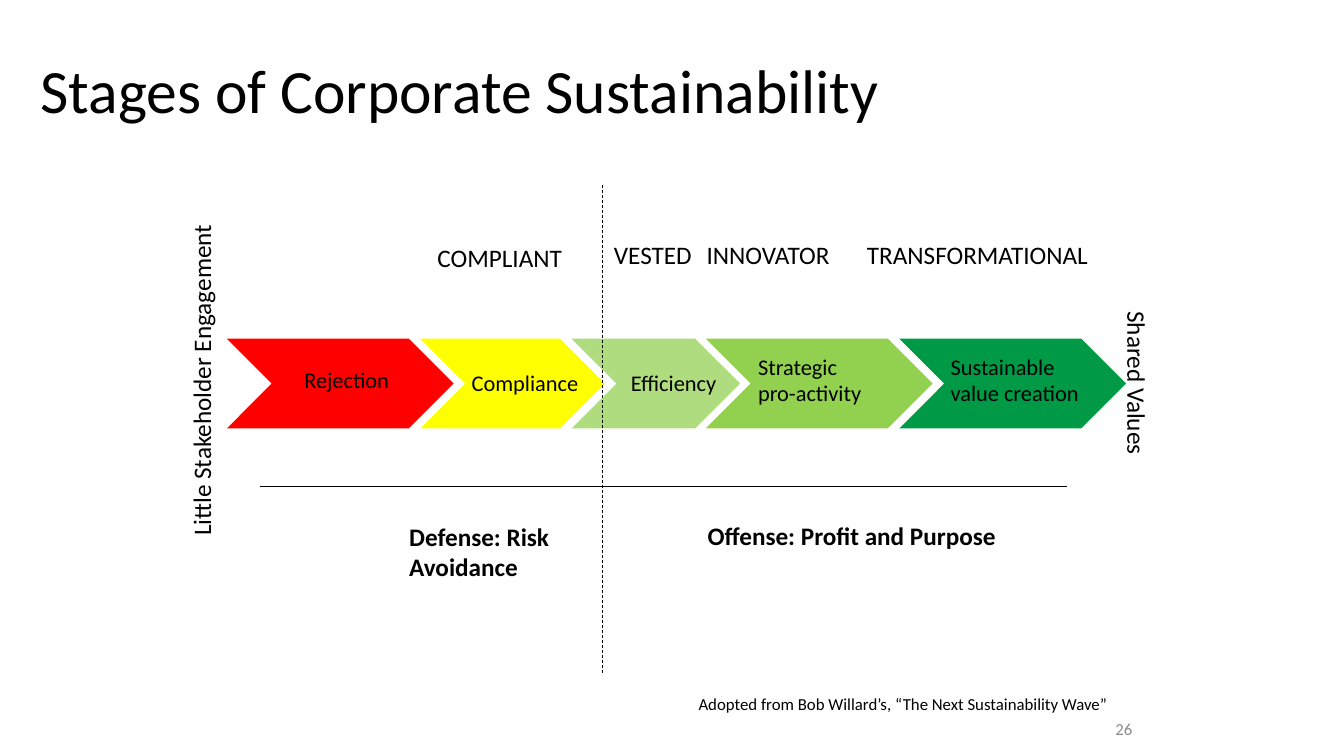
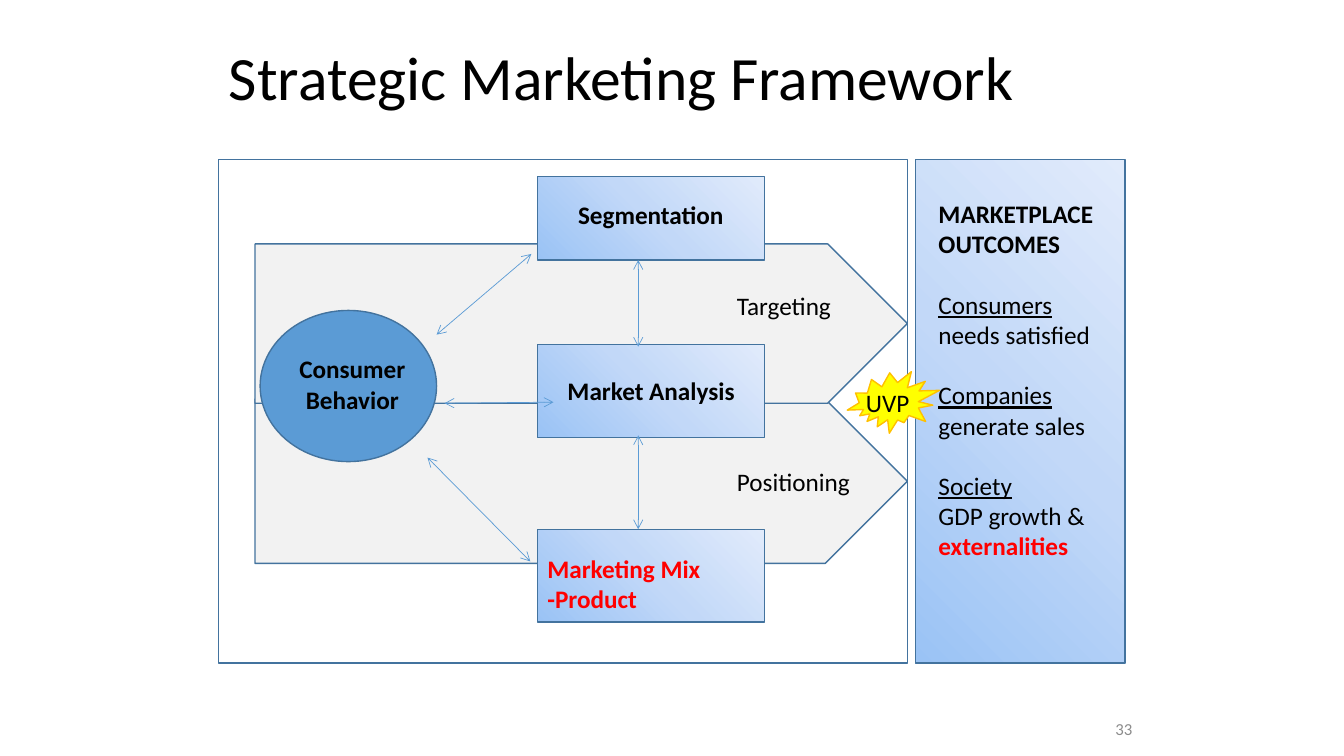
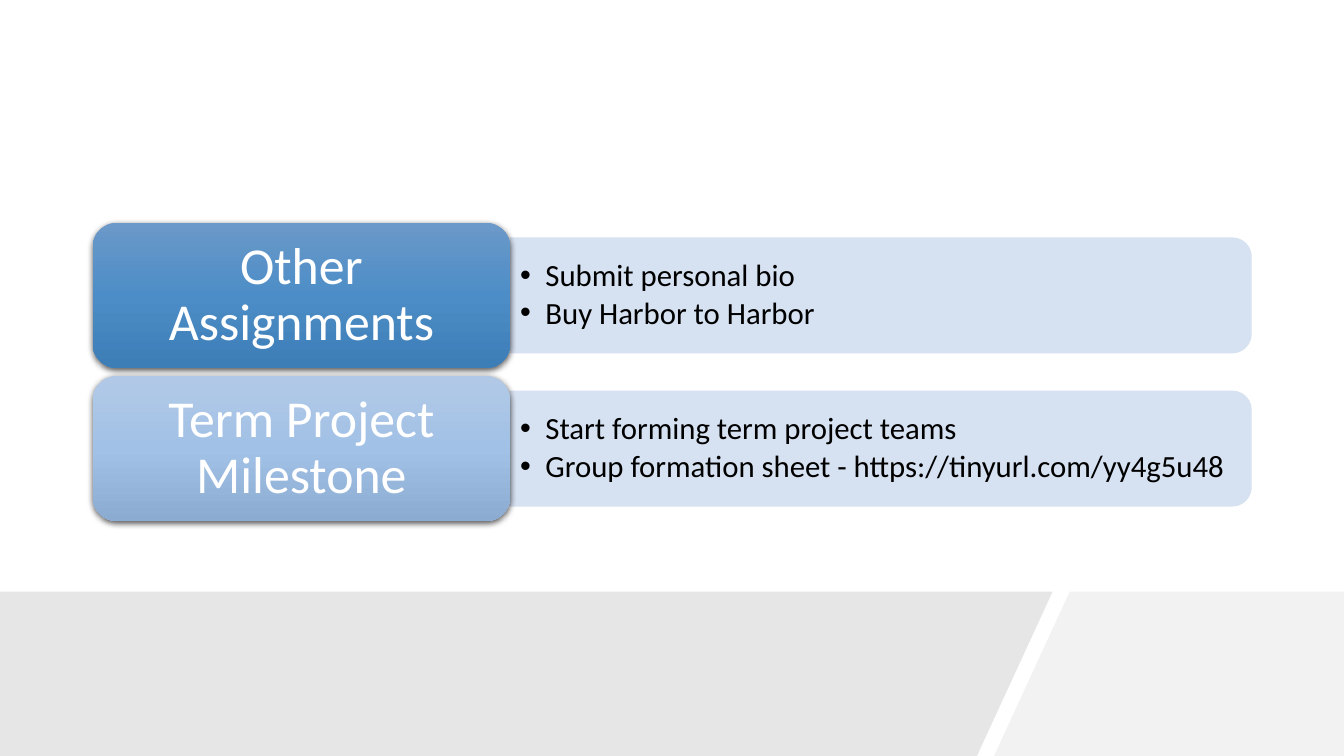
from pptx import Presentation
from pptx.dml.color import RGBColor
from pptx.enum.dml import MSO_LINE
from pptx.enum.shapes import MSO_CONNECTOR, MSO_SHAPE
from pptx.enum.text import MSO_ANCHOR, MSO_AUTO_SIZE, PP_ALIGN
from pptx.oxml import parse_xml
from pptx.oxml.ns import nsdecls, qn
from pptx.util import Inches, Pt

FONT = "Calibri"
BLACK, WHITE, RED, YELLOW = "000000", "FFFFFF", "FF0000", "FFFF00"
GREY, PALE_GREY, NUMBER_GREY = "E7E6E6", "F2F2F2", "8C8C8C"
BLUE, OUTLINE, PANEL = "5B9BD5", "43739E", "D6E1F1"
CORNER_GLOW = ("9AC3F5", "C2D8F8", "E1EBFB")
FROM_CORNER = '<a:path path="circle"><a:fillToRect l="0" t="100000" r="100000" b="0"/></a:path>'
DOWNWARD = '<a:lin ang="5400000" scaled="0"/>'
hex_color = RGBColor.from_string


def add_preset(slide, preset, box, fill=None, line=None, direction=FROM_CORNER):
    """Add a shape; fill is a hex colour, three gradient colours or None."""
    shape = slide.shapes.add_shape(preset, *map(Inches, box))
    shape.shadow.inherit = False
    if fill is None:
        shape.fill.background()
    elif isinstance(fill, str):
        shape.fill.solid()
        shape.fill.fore_color.rgb = hex_color(fill)
    else:
        shape.fill.gradient()
        stops = "".join(
            f'<a:gs pos="{i * 50000}"><a:srgbClr val="{color}"/></a:gs>'
            for i, color in enumerate(fill))
        properties = shape._element.spPr
        properties.replace(properties.find(qn("a:gradFill")), parse_xml(
            f'<a:gradFill {nsdecls("a")} rotWithShape="1">'
            f'<a:gsLst>{stops}</a:gsLst>{direction}</a:gradFill>'))
    if line:
        shape.line.color.rgb = hex_color(line)
        shape.line.width = Pt(1)
    else:
        shape.line.fill.background()
    return shape


def add_label(slide, text, box, size=18, bold=False, color=BLACK, align=PP_ALIGN.LEFT):
    label = slide.shapes.add_textbox(*map(Inches, box))
    label.text_frame.word_wrap = True
    label.text_frame.text = text
    for paragraph in label.text_frame.paragraphs:
        paragraph.alignment = align
        paragraph.font.name = FONT
        paragraph.font.size = Pt(size)
        paragraph.font.bold = bold
        paragraph.font.color.rgb = hex_color(color)
    return label


prs = Presentation()
prs.slide_width, prs.slide_height = Inches(13.33), Inches(7.5)

# Titled slides with their page numbers
titled = []
for title, box, number in [
    ("Stages of Corporate Sustainability", (0.3, 0.3, 11.29, 1.25), "26"),
    ("Strategic Marketing Framework", (2.17, 0.17, 9, 1.25), "33"),
]:
    slide = prs.slides.add_slide(prs.slide_layouts[5])
    heading = slide.shapes.title
    heading.left, heading.top, heading.width, heading.height = map(Inches, box)
    heading.text_frame.text = title
    heading.text_frame.vertical_anchor = MSO_ANCHOR.MIDDLE
    paragraph = heading.text_frame.paragraphs[0]
    paragraph.alignment = PP_ALIGN.LEFT
    paragraph.line_spacing = 0.9
    paragraph.font.name = FONT
    paragraph.font.size = Pt(44)
    paragraph.font.color.rgb = hex_color(BLACK)
    page = add_label(slide, number, (9, 7.03, 2.33, 0.4), 12,
                     color=NUMBER_GREY, align=PP_ALIGN.RIGHT)
    page.text_frame.vertical_anchor = MSO_ANCHOR.MIDDLE
    titled.append(slide)
stages, framework = titled

# Slide 1: stages of sustainability
for stage, left, width, fill, text_box in [
    ("Rejection", 2.25, 2.25, RED, (2.92, 3.58, 2.17, 0.37)),
    ("Compliance", 4.17, 1.83, YELLOW, (4.58, 3.61, 1.42, 0.37)),
    ("Efficiency", 5.67, 1.67, "AFDC7E", (6.16, 3.61, 1.17, 0.37)),
    ("Strategic\npro-activity", 7, 2.25, "92D050", (7.42, 3.45, 1.42, 0.64)),
    ("Sustainable value creation", 8.92, 2.25, "009A46", (9.33, 3.45, 1.67, 0.64)),
]:
    add_preset(stages, MSO_SHAPE.CHEVRON, (left, 3.36, width, 0.89), fill)
    add_label(stages, stage, text_box, 16)

for level, left, top, width in [
    ("COMPLIANT", 4.24, 2.35, 1.51),
    ("VESTED", 5.99, 2.33, 1.51),
    ("INNOVATOR", 6.91, 2.33, 1.51),
    ("TRANSFORMATIONAL", 8.5, 2.33, 2.42),
]:
    add_label(stages, level, (left, top, width, 0.4))

add_label(stages, "Shared Values", (10.07, 4, 2.42, 0.4)).rotation = 90
add_label(stages, "Little Stakeholder Engagement", (0.28, 3.5, 3.43, 0.4)).rotation = 270
add_label(stages, "Defense: Risk Avoidance", (3.96, 5.12, 2.21, 1.01), bold=True)
add_label(stages, "Offense: Profit and Purpose", (6.92, 5.11, 3.63, 0.71), bold=True)
add_label(stages, "Adopted from Bob Willard’s, “The Next Sustainability Wave”",
          (6.83, 6.83, 4.58, 0.3), 12)

# Slide 2: marketing framework
for preset, box, fill in [
    (MSO_SHAPE.PENTAGON, (2.53, 3.96, 6.47, 1.63), PALE_GREY),
    (MSO_SHAPE.PENTAGON, (2.53, 2.42, 6.47, 1.58), PALE_GREY),
    (MSO_SHAPE.RECTANGLE, (5.33, 1.75, 2.25, 0.83), CORNER_GLOW),
    (MSO_SHAPE.RECTANGLE, (5.33, 3.42, 2.25, 0.92), CORNER_GLOW),
    (MSO_SHAPE.RECTANGLE, (5.33, 5.25, 2.25, 0.92), CORNER_GLOW),
    (MSO_SHAPE.OVAL, (2.58, 3.08, 1.75, 1.5), BLUE),
    (MSO_SHAPE.RECTANGLE, (2.17, 1.58, 6.83, 5), None),
    (MSO_SHAPE.RECTANGLE, (9.08, 1.58, 2.08, 5), CORNER_GLOW),
]:
    add_preset(framework, preset, box, fill, OUTLINE)

add_label(framework, "Targeting", (7.21, 2.83, 1.79, 0.42))
add_label(framework, "Positioning", (7.21, 4.58, 1.79, 0.42))
add_label(framework, "Segmentation", (5.33, 1.93, 2.25, 0.4), bold=True, align=PP_ALIGN.CENTER)
add_label(framework, "Market Analysis", (5.53, 3.67, 3.12, 0.71), bold=True)
add_label(framework, "Marketing Mix\n-Product", (5.33, 5.44, 2.75, 0.71), bold=True, color=RED)
add_label(framework, "Consumer Behavior", (2.58, 3.46, 1.83, 0.71),
          bold=True, align=PP_ALIGN.CENTER)

outcomes = add_label(framework, "MARKETPLACE\nOUTCOMES", (9.21, 1.92, 1.96, 4.04), bold=True)
for starts_group, parts in [
    (True, [("Consumers ", "underline"), ("needs satisfied", None)]),
    (True, [("Companies", "underline"), (" generate sales", None)]),
    (True, [("Society", "underline")]),
    (False, [("GDP growth & ", None), ("externalities", "alert")]),
]:
    paragraph = outcomes.text_frame.add_paragraph()
    paragraph.space_before = Pt(21.5 if starts_group else 0)
    for text, emphasis in parts:
        run = paragraph.add_run()
        run.text = text
        run.font.name = FONT
        run.font.size = Pt(18)
        run.font.underline = emphasis == "underline"
        run.font.bold = emphasis == "alert"
        run.font.color.rgb = hex_color(RED if emphasis == "alert" else BLACK)

burst = add_preset(framework, MSO_SHAPE.EXPLOSION2, (8.56, 3.55, 0.63, 0.89), YELLOW, "FFC000")
burst.rotation = 60
add_label(framework, "UVP", (8.49, 3.79, 0.66, 0.42))

# Divider lines of slide 1 and two-way arrows of slide 2
for slide, ends, color, dashed, two_way in [
    (stages, (5.97, 1.84, 5.97, 6.68), BLACK, True, False),
    (stages, (2.58, 4.83, 10.58, 4.83), BLACK, False, False),
    (framework, (5.27, 2.52, 4.33, 3.32), BLUE, False, True),
    (framework, (5.49, 3.99, 4.41, 4), BLUE, False, True),
    (framework, (5.26, 5.57, 4.24, 4.54), BLUE, False, True),
    (framework, (6.33, 3.44, 6.33, 2.58), BLUE, False, True),
    (framework, (6.33, 5.25, 6.33, 4.32), BLUE, False, True),
]:
    link = slide.shapes.add_connector(MSO_CONNECTOR.STRAIGHT, *map(Inches, ends))
    link.line.color.rgb = hex_color(color)
    link.line.width = Pt(0.5)
    if dashed:
        link.line.dash_style = MSO_LINE.DASH
    if two_way:
        for end in ("headEnd", "tailEnd"):
            link.line._get_or_add_ln().append(
                parse_xml(f'<a:{end} {nsdecls("a")} type="arrow"/>'))
    link._element.spPr.append(parse_xml(f'<a:effectLst {nsdecls("a")}/>'))

# Slide 3: assignments
assignments = prs.slides.add_slide(prs.slide_layouts[3])
unused_title = assignments.shapes.title._element
unused_title.getparent().remove(unused_title)

for fill, outline in [
    (PALE_GREY, [(10.61, 5.87), (13.33, 5.87), (13.33, 7.5), (9.86, 7.5)]),
    (GREY, [(-0.02, 5.87), (10.44, 5.87), (9.69, 7.5), (-0.02, 7.5)]),
]:
    corners = [(Inches(x), Inches(y)) for x, y in outline]
    builder = assignments.shapes.build_freeform(*corners[0])
    builder.add_line_segments(corners[1:], close=True)
    band = builder.convert_to_shape()
    band.shadow.inherit = False
    band.fill.solid()
    band.fill.fore_color.rgb = hex_color(fill)
    band.line.fill.background()

for row, (topic, colors, tasks) in enumerate([
    ("Other Assignments", ("6B99C9", "4D8DC7", "3E7EB7"),
     "Submit personal bio\nBuy Harbor to Harbor"),
    ("Term Project Milestone", ("B1C9E7", "A2C1E6", "8CABD1"),
     "Start forming term project teams\n"
     "Group formation sheet - https://tinyurl.com/yy4g5u48"),
]):
    top = 2.21 + 1.52 * row
    panel = add_preset(assignments, MSO_SHAPE.ROUND_2_SAME_RECTANGLE,
                       (8.16, top - 2.96, 1.15, 7.36), PANEL)
    panel.rotation = 90

    task_list = assignments.placeholders[row + 1]
    assignments.shapes._spTree.append(task_list._element)
    task_list.left, task_list.top, task_list.width, task_list.height = map(
        Inches, (5.06, top + 0.2, 7.3, 1.04))
    frame = task_list.text_frame
    frame.text = tasks
    frame.auto_size = MSO_AUTO_SIZE.NONE
    frame.vertical_anchor = MSO_ANCHOR.MIDDLE
    for paragraph in frame.paragraphs:
        indents = paragraph._p.get_or_add_pPr()
        indents.set("marL", str(Inches(0.25)))
        indents.set("indent", str(-Inches(0.25)))
        paragraph.line_spacing = 0.9
        paragraph.space_before = Pt(0)
        paragraph.space_after = Pt(3)
        paragraph.font.name = FONT
        paragraph.font.size = Pt(22)
        paragraph.font.color.rgb = hex_color(BLACK)

    card = add_preset(assignments, MSO_SHAPE.ROUNDED_RECTANGLE,
                      (0.92, top, 4.14, 1.44), colors, direction=DOWNWARD)
    card._element.spPr.find(qn("a:effectLst")).append(parse_xml(
        f'<a:outerShdw {nsdecls("a")} blurRad="{Pt(4.5)}" dist="{Pt(1.5)}" dir="5400000" '
        f'rotWithShape="0"><a:srgbClr val="{BLACK}"><a:alpha val="63000"/></a:srgbClr>'
        '</a:outerShdw>'))
    frame = card.text_frame
    frame.text = topic
    frame.word_wrap = True
    frame.margin_left = frame.margin_right = Inches(0.15)
    frame.margin_top = frame.margin_bottom = Inches(0.08)
    paragraph = frame.paragraphs[0]
    paragraph.alignment = PP_ALIGN.CENTER
    paragraph.line_spacing = 0.9
    paragraph.font.name = FONT
    paragraph.font.size = Pt(37)
    paragraph.font.color.rgb = hex_color(WHITE)

prs.save("out.pptx")
